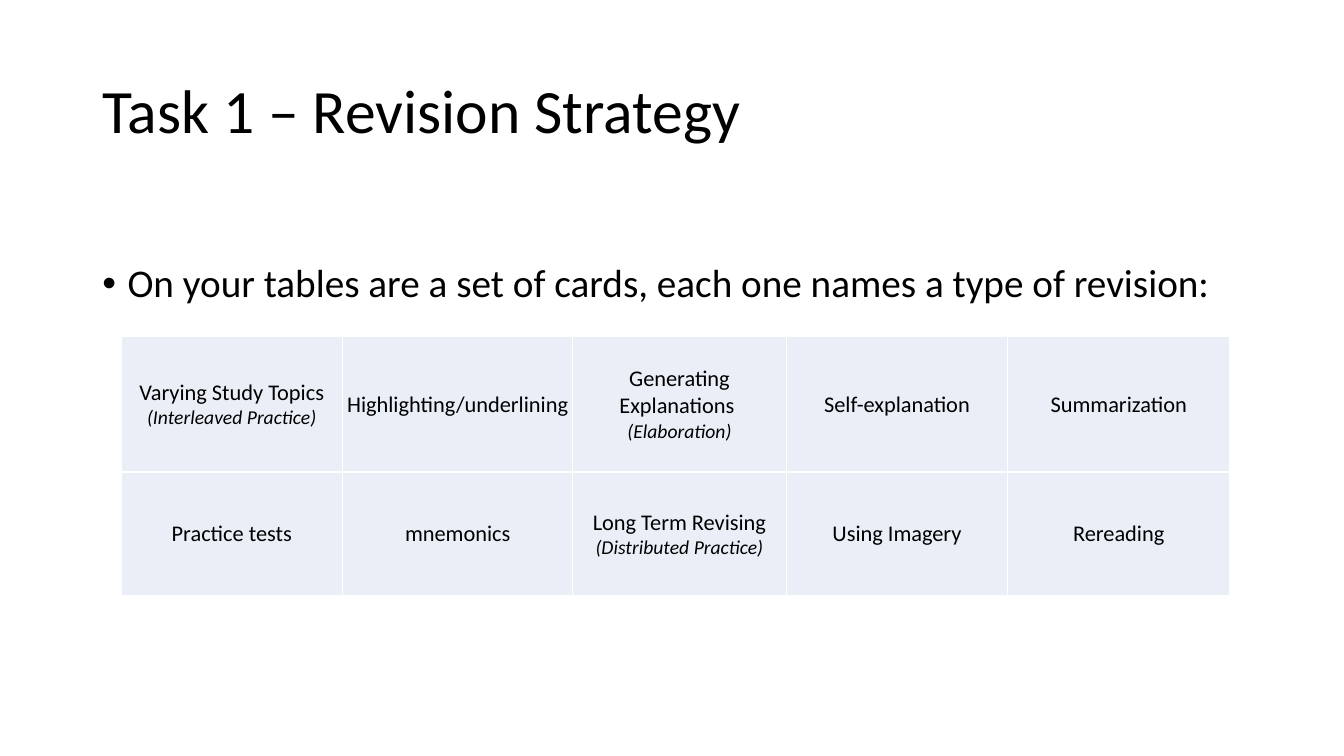
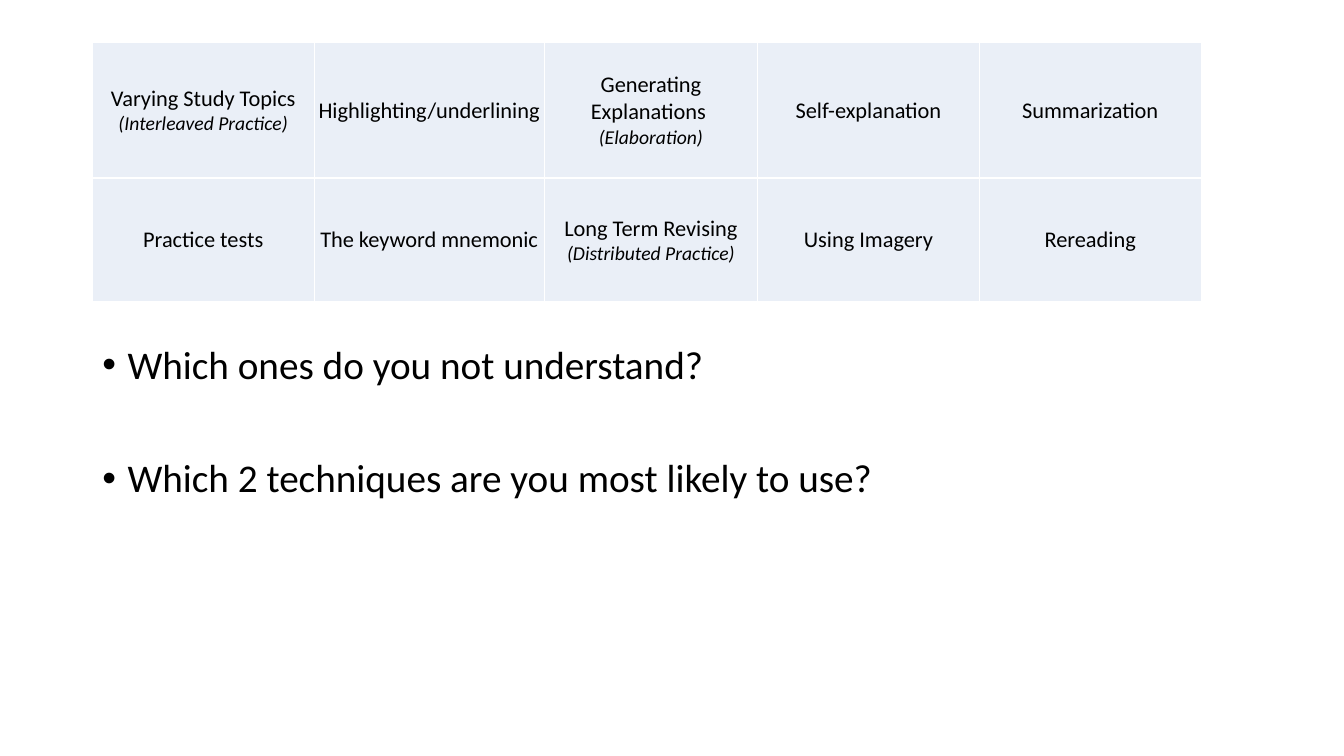
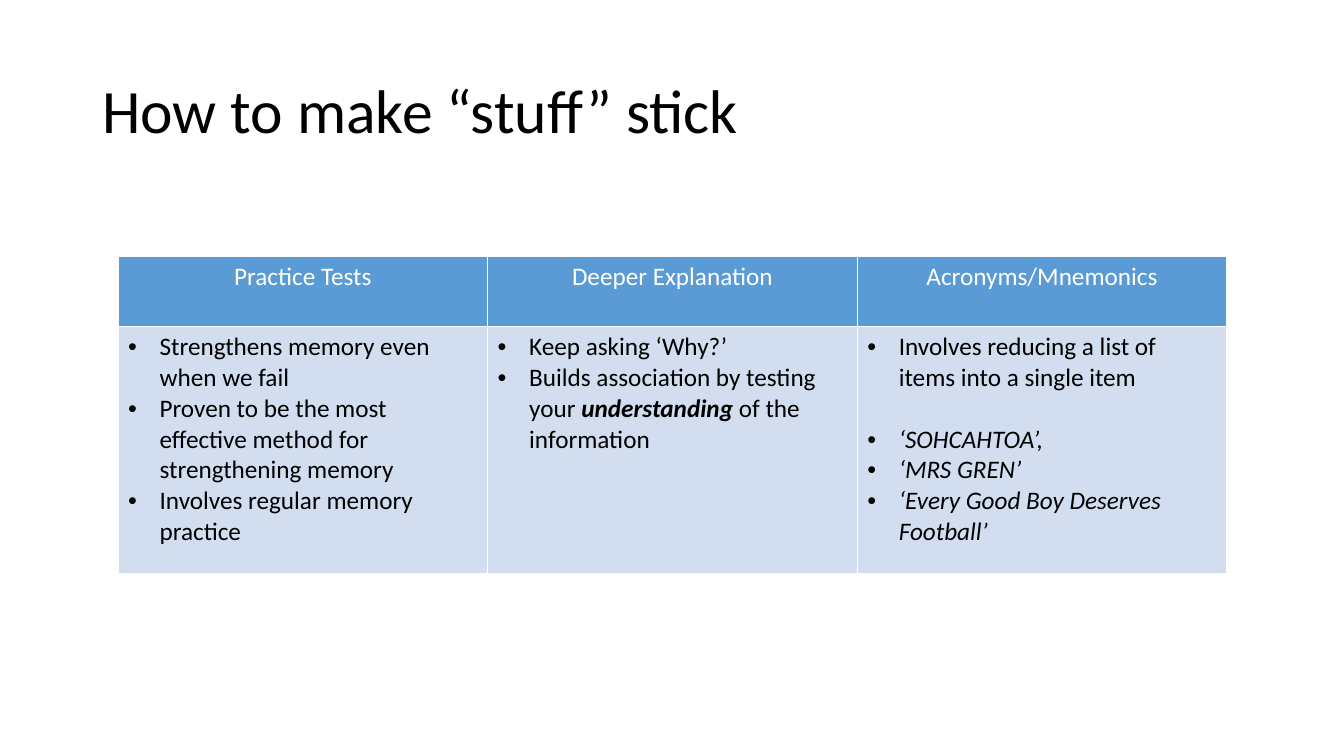
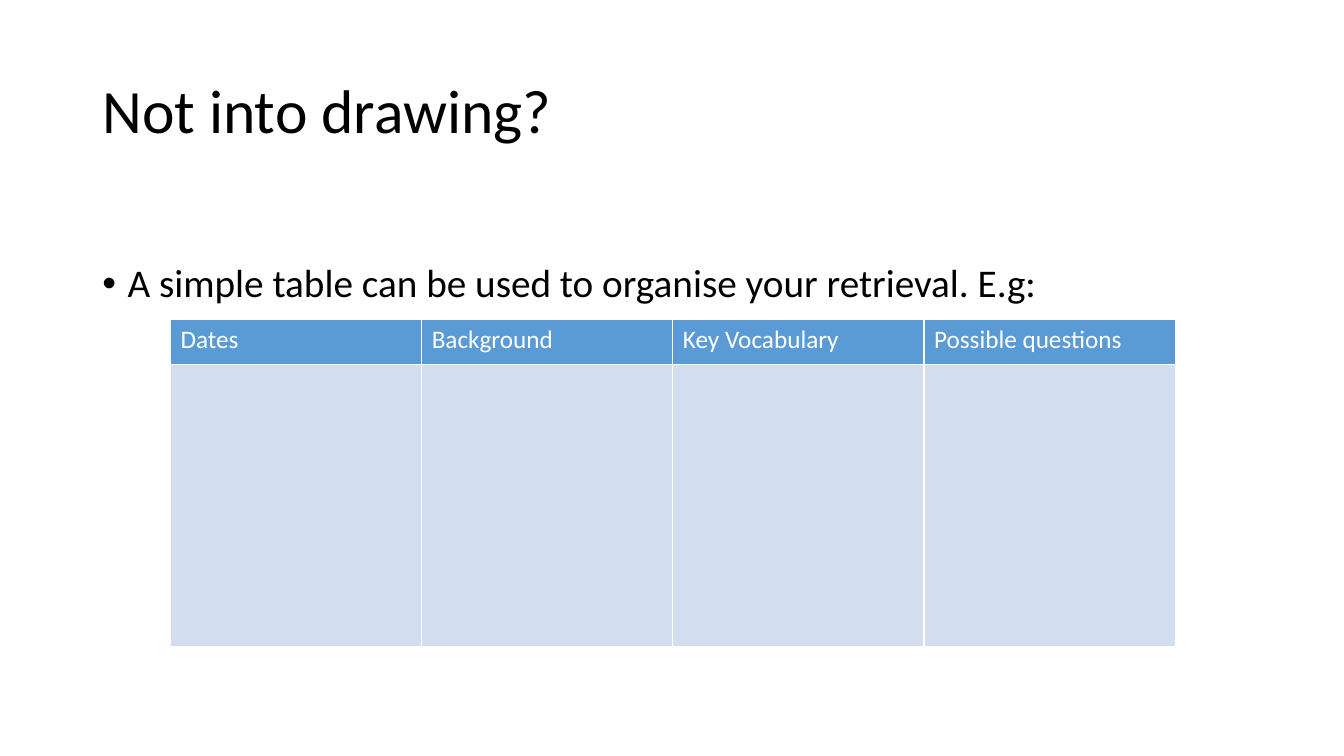
"""Build four slides on revision strategies."""
from dataclasses import dataclass
from typing import Optional

from lxml import etree
from pptx import Presentation
from pptx import util as u
from pptx.dml.color import RGBColor
from pptx.enum import text as t
from pptx.oxml import ns

SLIDE_WIDTH, SLIDE_HEIGHT = u.Inches(13.33), u.Inches(7.5)
GRID_COLUMNS, GRID_ROWS = 160, 90


@dataclass(frozen=True)
class Theme:
    font: str = "Calibri"
    ink: str = "000000"
    paper: str = "FFFFFF"
    header: str = "5B9BD5"
    panel: str = "D2DEEF"
    card: str = "EAEFF7"
    title_size: float = 44
    body_size: float = 28
    table_size: float = 18
    card_size: float = 16
    note_size: float = 14
    line_spacing: float = 0.9
    border: float = 1


THEME = Theme()


@dataclass(frozen=True)
class Box:
    left: float
    top: float
    width: float
    height: float


@dataclass(frozen=True)
class Run:
    text: str
    size: Optional[float] = None
    bold: Optional[bool] = None
    italic: Optional[bool] = None


@dataclass(frozen=True)
class Line:
    runs: tuple[Run, ...]
    size: float
    color: str = THEME.ink
    italic: bool = False
    centred: bool = False
    indent: float = 0
    gap: float = 0
    spacing: Optional[float] = None


@dataclass(frozen=True)
class Cell:
    lines: tuple[Line, ...]
    fill: str
    card: bool = False


@dataclass(frozen=True)
class Grid:
    left: float
    top: float
    widths: tuple[float, ...]
    heights: tuple[float, ...]
    rows: tuple[tuple[Cell, ...], ...]
    headed: bool = True


@dataclass(frozen=True)
class Page:
    grid: Grid
    title: str = ""
    bullets: tuple[str, ...] = ()
    body: Box = Box(11, 24, 138, 57.1)
    lead: float = 7.4


TITLE_BOX = Box(11, 4.8, 138, 17.4)
BULLET_GAP = 51
SKIPPED_LINE = 22
CARD_INSET = 0.12


def across(columns: float) -> int:
    return round(SLIDE_WIDTH * columns / GRID_COLUMNS)


def down(rows: float) -> int:
    return round(SLIDE_HEIGHT * rows / GRID_ROWS)


def write_lines(frame, lines: tuple[Line, ...]) -> None:
    for index, line in enumerate(lines):
        paragraph = frame.add_paragraph() if index else frame.paragraphs[0]
        paragraph.space_before = u.Pt(line.gap)
        paragraph.alignment = t.PP_ALIGN.CENTER if line.centred else t.PP_ALIGN.LEFT
        if line.spacing:
            paragraph.line_spacing = line.spacing
        if line.indent:
            add_bullet(paragraph, line.indent)
        font = paragraph.font
        font.name, font.size = THEME.font, u.Pt(line.size)
        font.bold, font.italic = False, line.italic
        font.color.rgb = RGBColor.from_string(line.color)
        for part in line.runs:
            run = paragraph.add_run()
            run.text = part.text
            if part.size:
                run.font.size = u.Pt(part.size)
            if part.bold is not None:
                run.font.bold = part.bold
            if part.italic is not None:
                run.font.italic = part.italic


def add_bullet(paragraph, indent: float) -> None:
    properties = paragraph._p.get_or_add_pPr()
    properties.set("marL", str(across(indent)))
    properties.set("indent", str(-across(indent)))
    etree.SubElement(properties, ns.qn("a:buFont")).set("typeface", "Arial")
    etree.SubElement(properties, ns.qn("a:buChar")).set("char", "•")


def add_text(slide, box: Box, lines: tuple[Line, ...], lead: float = 0,
             anchor: t.MSO_ANCHOR = t.MSO_ANCHOR.TOP) -> None:
    frame = slide.shapes.add_textbox(across(box.left), down(box.top),
                                     across(box.width), down(box.height)).text_frame
    frame.word_wrap = True
    frame.vertical_anchor = anchor
    if lead:
        frame.margin_top = down(lead)
    write_lines(frame, lines)


def add_borders(cell) -> None:
    properties = cell._tc.get_or_add_tcPr()
    for index, side in enumerate(("lnL", "lnR", "lnT", "lnB")):
        edge = etree.Element(ns.qn(f"a:{side}"), w=str(u.Pt(THEME.border)))
        fill = etree.SubElement(edge, ns.qn("a:solidFill"))
        etree.SubElement(fill, ns.qn("a:srgbClr")).set("val", THEME.paper)
        properties.insert(index, edge)


def add_grid(slide, grid: Grid) -> None:
    table = slide.shapes.add_table(
        len(grid.heights), len(grid.widths), across(grid.left), down(grid.top),
        across(sum(grid.widths)), down(sum(grid.heights))).table
    table.first_row, table.horz_banding = grid.headed, False
    for column, width in zip(table.columns, grid.widths):
        column.width = across(width)
    for row, height, contents in zip(table.rows, grid.heights, grid.rows):
        row.height = down(height)
        for cell, content in zip(row.cells, contents):
            cell.fill.solid()
            cell.fill.fore_color.rgb = RGBColor.from_string(content.fill)
            add_borders(cell)
            if content.card:
                cell.vertical_anchor = t.MSO_ANCHOR.MIDDLE
                cell.margin_left = cell.margin_right = across(CARD_INSET)
                cell.margin_top, cell.margin_bottom = down(CARD_INSET), 0
            write_lines(cell.text_frame, content.lines)


def card(*lines: tuple[Run, ...]) -> Cell:
    return Cell(tuple(Line(runs, THEME.card_size, centred=True) for runs in lines),
                THEME.card, card=True)


def plain(name: str) -> Cell:
    return card((Run(name),))


def note(label: str) -> Run:
    return Run(label, size=THEME.note_size, italic=True)


def strategy_cards(left: float, top: float, mnemonic: str) -> Grid:
    return Grid(left, top, (26.4, 27.4, 25.4, 26.4, 26.4), (16.2, 14.7), (
        (card((Run("Varying Study Topics "), note("(Interleaved Practice)"))),
         plain("Highlighting/underlining"),
         card((Run("Generating Explanations "),), (note("(Elaboration)"),)),
         plain("Self-explanation"), plain("Summarization")),
        (plain("Practice tests"), plain(mnemonic),
         card((Run("Long Term Revising"),), (note("(Distributed Practice)"),)),
         plain("Using Imagery"), plain("Rereading")),
    ), headed=False)


def header(label: str, centred: bool = False) -> Cell:
    return Cell((Line((Run(label),), THEME.table_size, THEME.paper, centred=centred),),
                THEME.header)


def point(*runs: Run, italic: bool = False, gap: float = 0) -> Line:
    return Line(runs, THEME.table_size, italic=italic, indent=3.75, gap=gap)


def panel(*points: Line) -> Cell:
    return Cell(points, THEME.panel)


METHODS = Grid(14.05, 30.5, (44,) * 3, (8.4, 29.4), (
    tuple(header(label, centred=True) for label in
          ("Practice Tests", "Deeper Explanation", "Acronyms/Mnemonics")),
    (panel(point(Run("Strengthens memory even when we fail")),
           point(Run("Proven to be the most effective method for strengthening memory")),
           point(Run("Involves regular memory practice"))),
     panel(point(Run("Keep asking ‘Why?’")),
           point(Run("Builds association by testing your "),
                 Run("understanding", bold=True, italic=True),
                 Run(" of the information"))),
     panel(point(Run("Involves reducing a list of items into a single item")),
           point(Run("‘SOHCAHTOA’,"), italic=True, gap=SKIPPED_LINE),
           point(Run("‘MRS GREN’"), italic=True),
           point(Run("‘Every Good Boy Deserves Football’"), italic=True))),
))

RETRIEVAL = Grid(20.3, 38, (29.9,) * 4, (5.4, 33.6), (
    tuple(header(label) for label in
          ("Dates", "Background", "Key Vocabulary", "Possible questions")),
    (panel(),) * 4,
))

PAGES = (
    Page(strategy_cards(14.4, 40, "mnemonics"), "Task 1 – Revision Strategy",
         ("On your tables are a set of cards, each one names a type of revision:",)),
    Page(strategy_cards(11, 5, "The keyword mnemonic"),
         bullets=("Which ones do you not understand?",
                  "Which 2 techniques are you most likely to use?"),
         body=Box(11, 33.7, 138, 45.1)),
    Page(METHODS, "How to make “stuff” stick"),
    Page(RETRIEVAL, "Not into drawing?",
         ("A simple table can be used to organise your retrieval. E.g:",)),
)


def add_page(deck, page: Page) -> None:
    slide = deck.slides.add_slide(deck.slide_layouts[6])
    if page.title:
        heading = Line((Run(page.title),), THEME.title_size, spacing=THEME.line_spacing)
        add_text(slide, TITLE_BOX, (heading,), anchor=t.MSO_ANCHOR.MIDDLE)
    if page.bullets:
        add_text(slide, page.body, tuple(
            Line((Run(bullet),), THEME.body_size, indent=3,
                 gap=BULLET_GAP if index else 0, spacing=THEME.line_spacing)
            for index, bullet in enumerate(page.bullets)), page.lead)
    add_grid(slide, page.grid)


def main() -> None:
    deck = Presentation()
    deck.slide_width, deck.slide_height = SLIDE_WIDTH, SLIDE_HEIGHT
    for page in PAGES:
        add_page(deck, page)
    deck.save("out.pptx")


if __name__ == "__main__":
    main()
